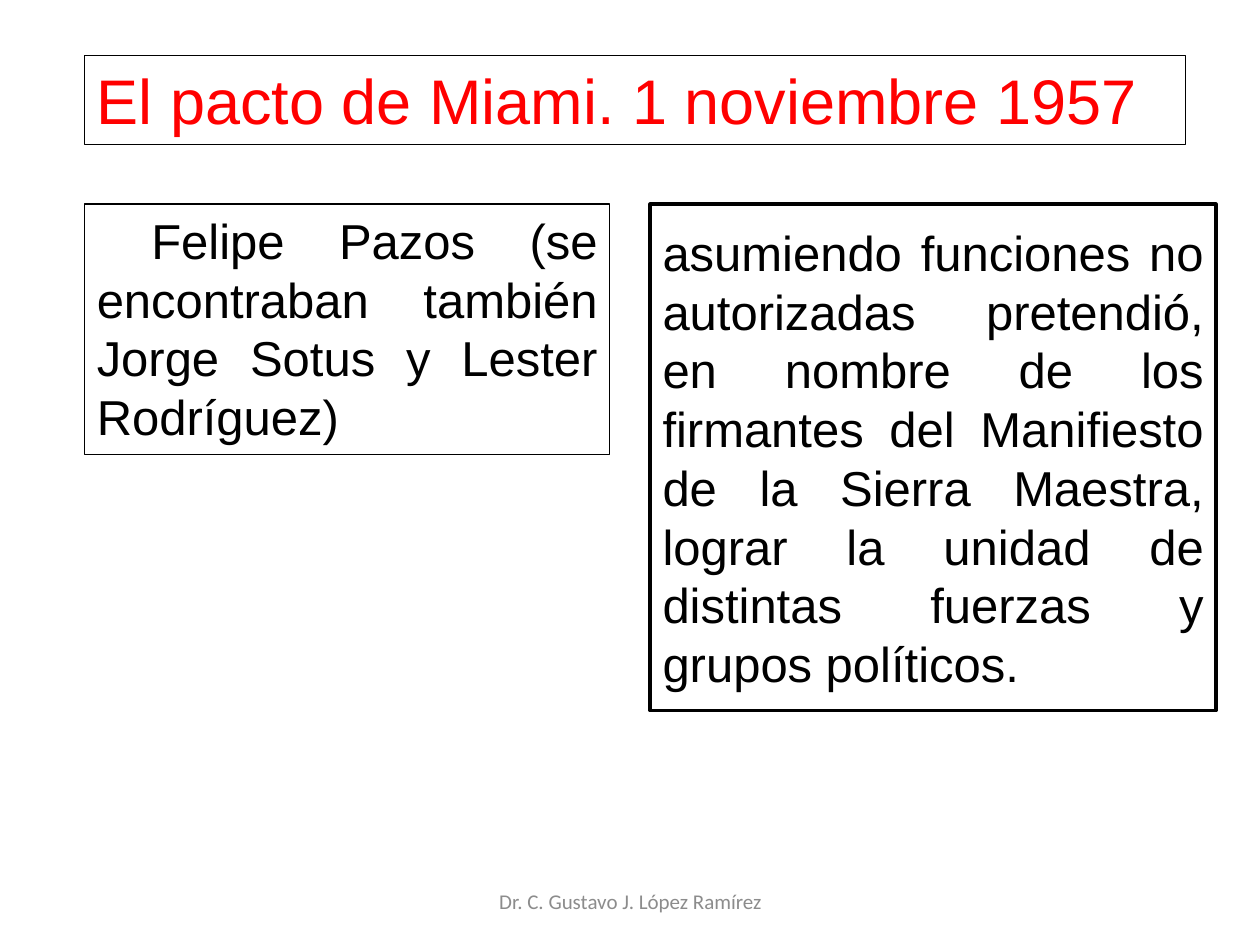
from pptx import Presentation
from pptx.dml.color import RGBColor
from pptx.enum.shapes import MSO_SHAPE
from pptx.enum.text import MSO_ANCHOR as Anchor, PP_ALIGN as Align
from pptx.util import Inches, Pt


def color(hex_value):
    return RGBColor.from_string(hex_value)


def write(shape, text, font_name, size, hex_value, align, anchor):
    frame = shape.text_frame
    frame.word_wrap = True
    frame.vertical_anchor = anchor
    paragraph = frame.paragraphs[0]
    paragraph.text = text
    paragraph.alignment = align
    paragraph.line_spacing = Pt(size * 1.2)
    paragraph.font.name = font_name
    paragraph.font.size = Pt(size)
    paragraph.font.color.rgb = color(hex_value)


presentation = Presentation()
presentation.slide_width = Inches(10)
presentation.slide_height = Inches(7.5)
slide = presentation.slides.add_slide(presentation.slide_layouts[6])

# Footer
footer = slide.shapes.add_textbox(Inches(3.42), Inches(6.95), Inches(3.17), Inches(0.4))
write(footer, "Dr. C. Gustavo J. López Ramírez", "Calibri", 12, "8C8C8C",
      Align.CENTER, Anchor.MIDDLE)

# Outlined boxes: title, right column, left column
left_edge, column_top = 0.67, 1.62
boxes = [
    (left_edge, 0.44, 8.74, 0.71, 0.75, "El pacto de Miami. 1 noviembre 1957",
     36, "FF0000", Align.LEFT, Anchor.TOP),
    (5.16, column_top, 4.49, 4.02, 2,
     "asumiendo funciones no autorizadas pretendió, en nombre de los firmantes "
     "del Manifiesto de la Sierra Maestra, lograr la unidad de distintas fuerzas "
     "y grupos políticos.",
     28, "000000", Align.JUSTIFY, Anchor.MIDDLE),
    (left_edge, column_top, 4.17, 1.99, 0.75,
     " Felipe Pazos (se encontraban también Jorge Sotus y Lester Rodríguez)",
     28, "000000", Align.JUSTIFY, Anchor.TOP),
]
for left, top, width, height, line_width, text, size, text_color, align, anchor in boxes:
    box = slide.shapes.add_shape(MSO_SHAPE.RECTANGLE, Inches(left), Inches(top),
                                 Inches(width), Inches(height))
    box.shadow.inherit = False
    box.fill.background()
    box.line.color.rgb = color("000000")
    box.line.width = Pt(line_width)
    write(box, text, "Arial", size, text_color, align, anchor)

presentation.save("out.pptx")
